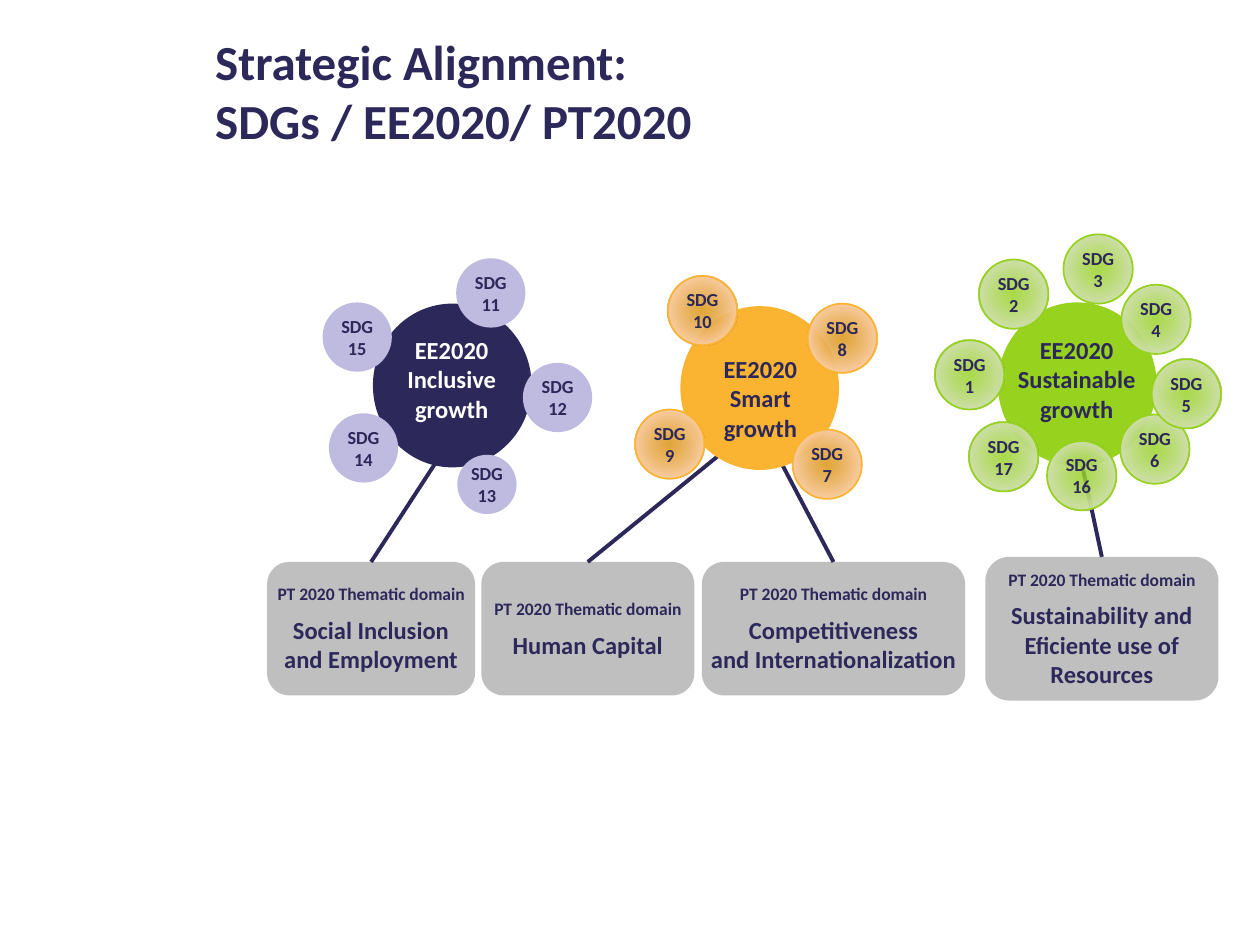
from lxml import etree
from pptx import Presentation
from pptx.dml.color import RGBColor
from pptx.enum.shapes import MSO_CONNECTOR, MSO_SHAPE
from pptx.enum.text import MSO_ANCHOR, PP_ALIGN
from pptx.oxml import parse_xml
from pptx.oxml.ns import nsdecls, qn
from pptx.util import Inches, Pt

ELLIPSE, ROUNDED = MSO_SHAPE.OVAL, MSO_SHAPE.ROUNDED_RECTANGLE
STRAIGHT = MSO_CONNECTOR.STRAIGHT
TOP, MIDDLE = MSO_ANCHOR.TOP, MSO_ANCHOR.MIDDLE
LEFT, CENTER = PP_ALIGN.LEFT, PP_ALIGN.CENTER

NAVY, WHITE, GRAY = "2D285A", "FFFFFF", "BFBFBF"
LILAC, ORANGE, GREEN = "BEBAE0", "FAB432", "96D21E"
HUB_SIZE = (1.26, 1.3)
BUBBLE_SIZE = 0.55

# Gradient stops: position %, colour, opacity %
GREEN_GLOW = [(0, GREEN, 80), (74, "D2E0B4", 100), (83, "D2E0B4", 100), (100, "E1EBCD", 100)]
ORANGE_GLOW = [(0, "D98F05", 79), (74, "FBD0AC", 100), (83, "FBD0AC", 100), (100, "FDE0C7", 100)]

# Card: left, top, width, height, domain lines, start of its connector
CARDS = [
    (2.12, 4.46, 1.65, 1.06, ["Social Inclusion", "and Employment"], (3.59, 3.47)),
    (3.82, 4.46, 1.69, 1.06, ["Human Capital"], (6.03, 3.35)),
    (5.57, 4.46, 2.09, 1.06, ["Competitiveness", "and Internationalization"], (6.03, 3.35)),
    (7.82, 4.42, 1.85, 1.14, ["Sustainability and Eficiente use of Resources"], (8.55, 3.51)),
]

# Bubble: goal number, left, top, and a size where it is not the usual one
CLUSTERS = [
    {"hub": (7.92, 2.4), "fill": GREEN, "bubble": GREEN_GLOW, "outline": GREEN,
     "growth": "Sustainable growth", "caption": (7.97, 2.61, 1.15, 0.81), "color": NAVY,
     "goals": [(17, 7.69, 3.35), (6, 8.89, 3.29), (16, 8.31, 3.5), (5, 9.14, 2.85),
               (4, 8.9, 2.26), (3, 8.44, 1.86), (2, 7.77, 2.06), (1, 7.42, 2.7)]},
    {"hub": (5.4, 2.43), "fill": ORANGE, "bubble": ORANGE_GLOW, "outline": ORANGE,
     "growth": "Smart growth", "caption": (5.51, 2.76, 1.05, 0.81), "color": NAVY,
     "goals": [(7, 6.29, 3.41), (8, 6.41, 2.41), (9, 5.04, 3.25), (10, 5.3, 2.19)]},
    {"hub": (2.96, 2.41), "fill": NAVY, "bubble": LILAC, "outline": None,
     "growth": "Inclusive growth", "caption": (3.08, 2.61, 1.01, 0.81), "color": WHITE,
     "goals": [(12, 4.15, 2.88), (13, 3.63, 3.61, 0.47), (11, 3.62, 2.05),
               (14, 2.61, 3.28), (15, 2.56, 2.4)]},
]


def rgb(value):
    return RGBColor.from_string(value)


def set_glow(shape, stops):
    """Fill a shape with a gradient that spreads from its centre."""
    gradient = parse_xml(
        f'<a:gradFill {nsdecls("a")} rotWithShape="1"><a:gsLst/><a:path path="circle">'
        '<a:fillToRect l="50000" t="50000" r="50000" b="50000"/></a:path></a:gradFill>')
    stop_list = gradient.find(qn("a:gsLst"))
    for position, color, opacity in stops:
        stop = etree.SubElement(stop_list, qn("a:gs"), pos=str(position * 1000))
        tone = etree.SubElement(stop, qn("a:srgbClr"), val=color)
        if opacity < 100:
            etree.SubElement(tone, qn("a:alpha"), val=str(opacity * 1000))
    shape.fill.background()
    properties = shape._element.spPr
    properties.replace(properties.find(qn("a:noFill")), gradient)


def add_shape(slide, kind, bounds, fill, outline=None):
    shape = slide.shapes.add_shape(kind, *map(Inches, bounds))
    shape.shadow.inherit = False
    if isinstance(fill, str):
        shape.fill.solid()
        shape.fill.fore_color.rgb = rgb(fill)
    else:
        set_glow(shape, fill)
    if outline:
        shape.line.color.rgb = rgb(outline)
        shape.line.width = Pt(1)
    else:
        shape.line.fill.background()
    return shape


def write_text(box, lines, color=NAVY, align=CENTER, **frame_format):
    """Write (text, size, space after) lines as paragraphs of a box."""
    frame = box.text_frame
    for name, value in {"word_wrap": True, **frame_format}.items():
        setattr(frame, name, value)
    for index, (text, size, after) in enumerate(lines):
        para = frame.add_paragraph() if index else frame.paragraphs[0]
        para.alignment = align
        if after:
            para.space_after = Pt(after)
        span = para.add_run()
        span.text = text
        for name, value in {"name": "Calibri", "size": Pt(size), "bold": True}.items():
            setattr(span.font, name, value)
        span.font.color.rgb = rgb(color)


def add_text(slide, bounds, lines, **text_format):
    write_text(slide.shapes.add_textbox(*map(Inches, bounds)), lines, **text_format)


def no_margins():
    return {f"margin_{side}": 0 for side in ("left", "top", "right", "bottom")}


def add_card(slide, bounds, domain):
    card = add_shape(slide, ROUNDED, bounds, GRAY)
    lines = [("PT 2020 Thematic domain", 10, 6)] + [(text, 14, 0) for text in domain]
    write_text(card, lines, vertical_anchor=MIDDLE, **no_margins())
    return card


def add_link(slide, start, card):
    """Draw a line from a point to the middle of a card's top side."""
    begin = [Inches(length) for length in start]
    link = slide.shapes.add_connector(STRAIGHT, *begin, *begin)
    link.end_connect(card, 0)
    link.line.color.rgb = rgb(NAVY)
    link.line.width = Pt(2.25)
    etree.SubElement(link._element.spPr, qn("a:effectLst"))


def add_bubble(slide, cluster, number, left, top, size=BUBBLE_SIZE):
    bubble = add_shape(slide, ELLIPSE, (left, top, size, size),
                       cluster["bubble"], cluster["outline"])
    write_text(bubble, [("SDG", 10.5, 0), (str(number), 10.5, 0)],
               word_wrap=False, vertical_anchor=MIDDLE, **no_margins())


def add_cluster(slide, cluster):
    add_shape(slide, ELLIPSE, cluster["hub"] + HUB_SIZE, cluster["fill"])
    add_text(slide, cluster["caption"], [("EE2020", 14, 0), (cluster["growth"], 14, 0)],
             color=cluster["color"], vertical_anchor=TOP)
    for goal in cluster["goals"]:
        add_bubble(slide, cluster, *goal)


def main():
    deck = Presentation()
    deck.slide_width, deck.slide_height = Inches(10), Inches(7.5)
    slide = deck.slides.add_slide(deck.slide_layouts[6])
    add_text(slide, (1.61, 0.24, 7.51, 0.95),
             [("Strategic Alignment:", 28, 0), ("SDGs / EE2020/ PT2020", 28, 0)],
             align=LEFT, vertical_anchor=MIDDLE)
    for *bounds, domain, start in CARDS:
        add_link(slide, start, add_card(slide, bounds, domain))
    for cluster in CLUSTERS:
        add_cluster(slide, cluster)
    deck.save("out.pptx")


if __name__ == "__main__":
    main()
